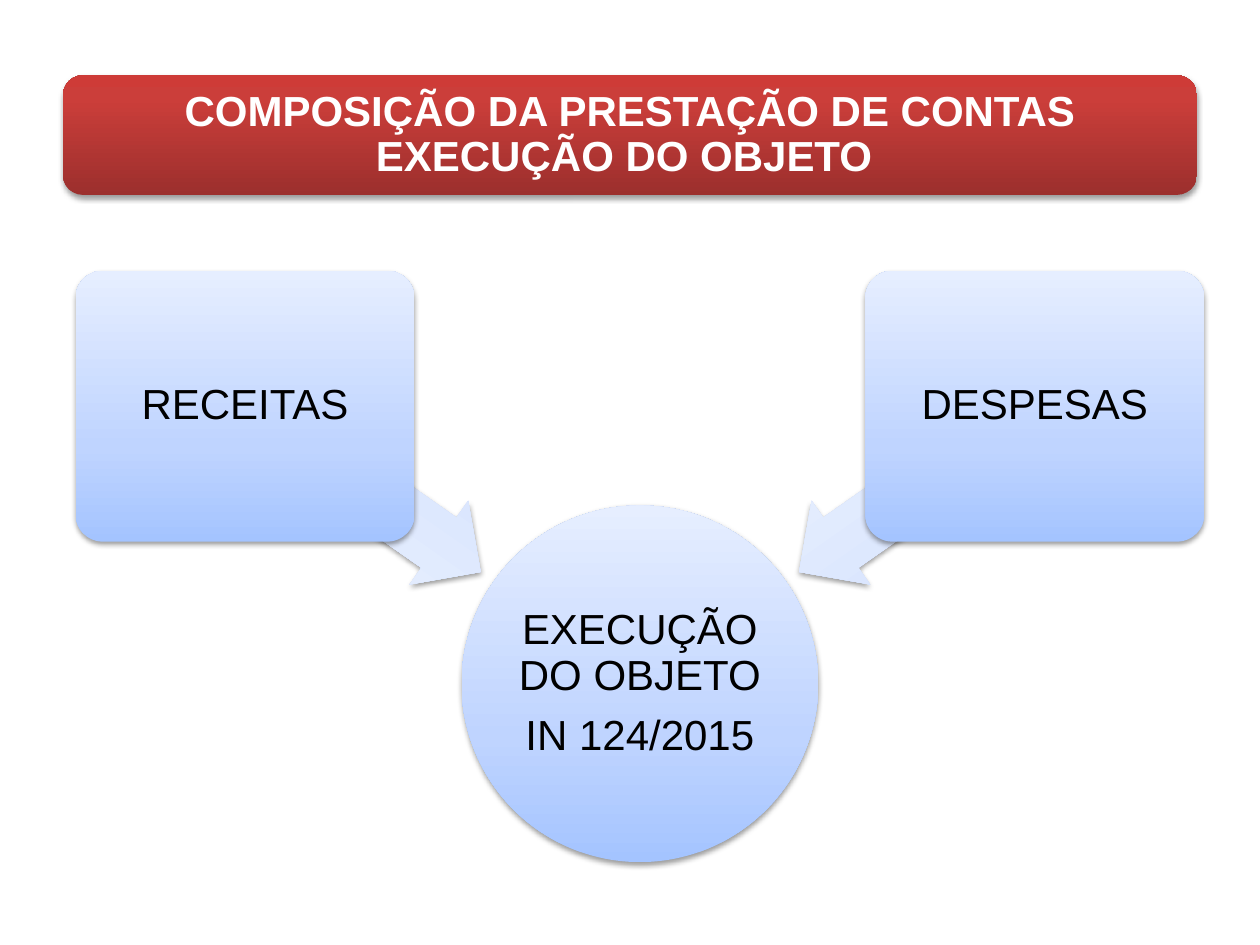
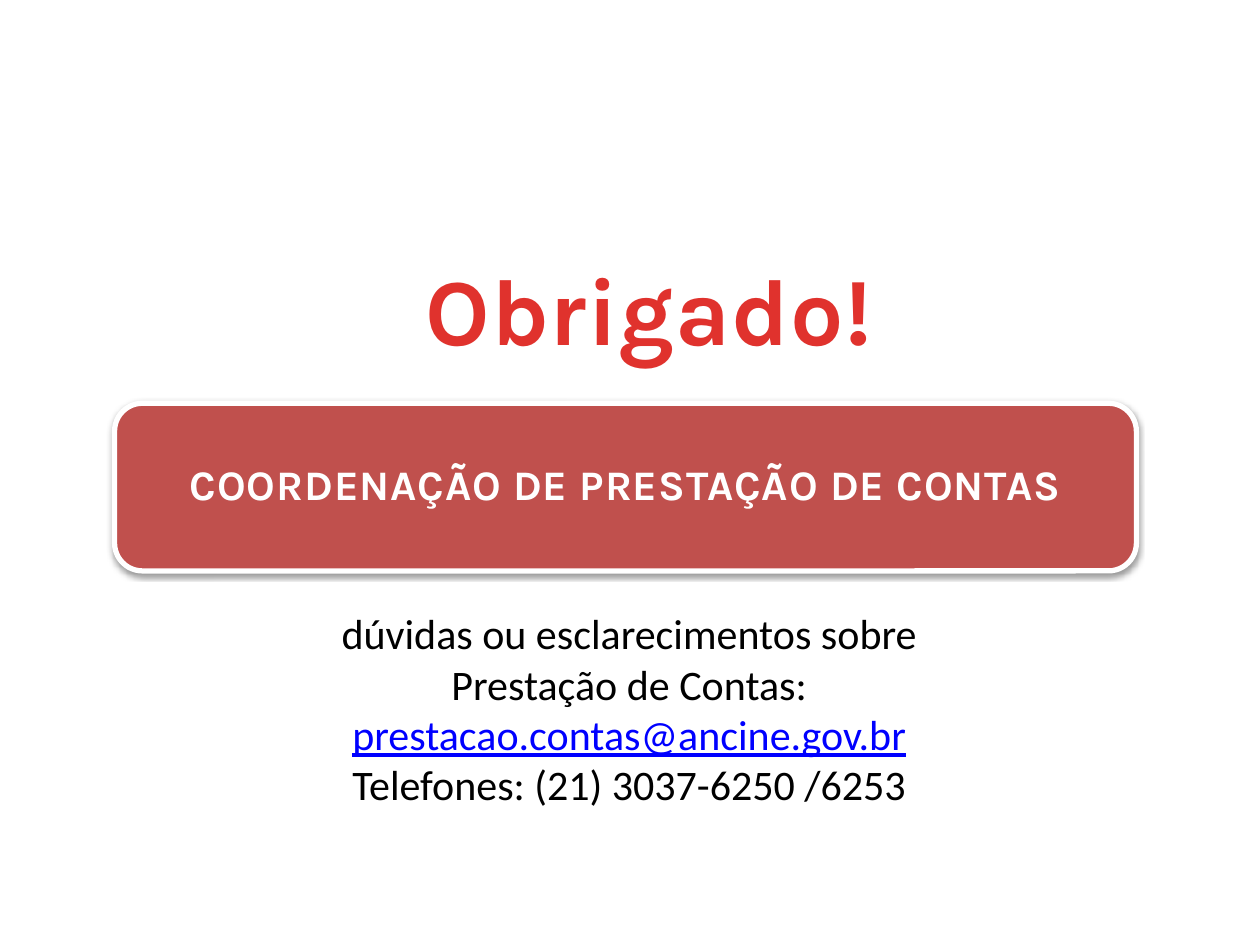
from dataclasses import dataclass

from lxml.etree import SubElement
from pptx import Presentation
from pptx.dml.color import RGBColor
from pptx.enum.shapes import MSO_SHAPE
from pptx.enum.text import MSO_ANCHOR, PP_ALIGN
from pptx.oxml.ns import qn
from pptx.util import Cm, Pt


@dataclass(frozen=True)
class Theme:
    """Colours, gradients (position, colour), fonts and type sizes."""
    white: str = "FFFFFF"
    black: str = "000000"
    banner: str = "C0504D"
    thanks: str = "E0322D"
    email: str = "0000FF"
    red_gradient: tuple = ((0, "9C2F2D"), (80, "CB3E3A"), (100, "CE3B37"))
    blue_gradient: tuple = ((0, "A4C4FF"), (35, "BFD4FF"), (100, "E6EEFF"))
    pale_gradient: tuple = ((0, "CDDDFE"), (35, "DBE6FE"), (100, "F0F5FF"))
    diagram_font: str = "Arial"
    closing_font: str = "Karla"
    contact_font: str = "Calibri"
    body_size: int = 24
    thanks_size: int = 54


class Deck:
    """Holds the theme and the current slide."""

    def __init__(self, theme):
        self.theme = theme
        self.presentation = Presentation()
        self.presentation.slide_width = Cm(25.4)
        self.presentation.slide_height = Cm(19.05)
        self.slide = None

    def new_slide(self):
        self.slide = self.presentation.slides.add_slide(
            self.presentation.slide_layouts[6])

    def add_shape(self, kind, box, fill, adjustments=(), rotation=0, outline=None, shadow=True):
        """Add a preset shape; fill is a colour or a tuple of gradient stops."""
        shape = self.slide.shapes.add_shape(kind, *map(Cm, box))
        shape.rotation = rotation
        for index, value in enumerate(adjustments):
            shape.adjustments[index] = value
        if isinstance(fill, str):
            shape.fill.solid()
            shape.fill.fore_color.rgb = RGBColor.from_string(fill)
        else:
            self.add_gradient(shape, fill)
        if outline:
            shape.line.color.rgb = RGBColor.from_string(outline)
            shape.line.width = Pt(3)
        else:
            shape.line.fill.background()
        shape.shadow.inherit = False
        if shadow:
            self.add_shadow(shape)
        return shape

    def add_gradient(self, shape, stops):
        """Fill from bottom to top with any number of stops."""
        shape.fill.gradient()
        shape.fill.gradient_angle = 90
        stop_list = shape._element.spPr.find(".//" + qn("a:gsLst"))
        for stop in list(stop_list):
            stop_list.remove(stop)
        for position, colour in stops:
            stop = SubElement(stop_list, qn("a:gs"), pos=str(position * 1000))
            SubElement(stop, qn("a:srgbClr"), val=colour)

    def add_shadow(self, shape):
        effects = shape._element.spPr.find(qn("a:effectLst"))
        shadow = SubElement(effects, qn("a:outerShdw"), blurRad=str(Pt(3.1)),
                            dist=str(Pt(1.6)), dir="5400000", rotWithShape="0")
        colour = SubElement(shadow, qn("a:srgbClr"), val=self.theme.black)
        SubElement(colour, qn("a:alpha"), val="38000")

    def add_text_box(self, box):
        return self.slide.shapes.add_textbox(*map(Cm, box))

    def add_text(self, shape, lines, font, colours, size=None, bold=False, inset=0.25,
                 anchor=MSO_ANCHOR.MIDDLE, line_spacing=0.9, gap=8.4, tracking=0):
        """Set centred paragraphs; colours holds one colour for each line."""
        frame = shape.text_frame
        frame_format = {
            "word_wrap": True, "vertical_anchor": anchor,
            "margin_left": Cm(inset), "margin_right": Cm(inset),
            "margin_top": Cm(inset), "margin_bottom": Cm(inset),
        }
        if anchor == MSO_ANCHOR.TOP:
            frame_format.update(margin_top=Cm(0.13), margin_bottom=Cm(0.13))
        for name, value in frame_format.items():
            setattr(frame, name, value)
        for index, (line, colour) in enumerate(zip(lines, colours)):
            paragraph = frame.add_paragraph() if index else frame.paragraphs[0]
            paragraph.text = line
            paragraph_format = {
                "alignment": PP_ALIGN.CENTER, "line_spacing": line_spacing,
                "space_before": Pt(gap if index else 0),
            }
            for name, value in paragraph_format.items():
                setattr(paragraph, name, value)
            run_format = {
                "name": font, "size": Pt(size or self.theme.body_size), "bold": bold,
                "underline": colour == self.theme.email,
            }
            for run in paragraph.runs:
                for name, value in run_format.items():
                    setattr(run.font, name, value)
                run.font.color.rgb = RGBColor.from_string(colour)
                if tracking:
                    run._r.get_or_add_rPr().set("spc", str(tracking))


def composition_slide(deck):
    theme = deck.theme
    deck.new_slide()

    # Title band
    title = deck.add_shape(MSO_SHAPE.ROUNDED_RECTANGLE, (1.27, 1.52, 22.86, 2.41),
                           theme.red_gradient)
    deck.add_text(title, ["COMPOSIÇÃO DA PRESTAÇÃO DE CONTAS\nEXECUÇÃO DO OBJETO "],
                  theme.diagram_font, [theme.white], bold=True)

    # Central circle
    centre, diameter = 12.9, 7.19
    circle = deck.add_shape(MSO_SHAPE.OVAL,
                            (centre - diameter / 2, 10.19, diameter, diameter),
                            theme.blue_gradient)
    deck.add_text(circle, ["EXECUÇÃO DO OBJETO", "IN 124/2015"],
                  theme.diagram_font, [theme.black] * 2, inset=0.05)

    # Sources on both sides, mirrored about the circle
    box_width, arrow_width = 6.83, 5.79
    box_offset, arrow_offset = 7.96, 5.58
    for label, side, rotation in (("RECEITAS", -1, 215), ("DESPESAS", 1, 325)):
        arrow_left = centre + side * arrow_offset - arrow_width / 2
        deck.add_shape(MSO_SHAPE.LEFT_ARROW, (arrow_left, 8.84, arrow_width, 2.06),
                       theme.pale_gradient, (0.6, 0.5), rotation)
        box_left = centre + side * box_offset - box_width / 2
        source = deck.add_shape(MSO_SHAPE.ROUNDED_RECTANGLE,
                                (box_left, 5.46, box_width, 5.46),
                                theme.blue_gradient, (0.1,))
        deck.add_text(source, [label], theme.diagram_font, [theme.black], inset=0.13)


def closing_slide(deck):
    theme = deck.theme
    deck.new_slide()

    # Department banner
    banner = deck.add_shape(MSO_SHAPE.ROUNDED_RECTANGLE, (2.31, 8.13, 20.6, 3.38),
                            theme.banner, outline=theme.white)
    deck.add_text(banner, ["COORDENAÇÃO DE PRESTAÇÃO DE CONTAS"], theme.closing_font,
                  [theme.white], bold=True, tracking=50)

    # Thanks
    thanks = deck.add_shape(MSO_SHAPE.RECTANGLE, (7.9, 4.93, 10.39, 2.57),
                            theme.white, shadow=False)
    deck.add_text(thanks, ["Obrigado!"], theme.closing_font, [theme.thanks],
                  size=theme.thanks_size, bold=True, anchor=MSO_ANCHOR.TOP,
                  line_spacing=1.0, tracking=50)

    # Contact details
    contact = deck.add_text_box((5.89, 12.12, 13.59, 4.37))
    deck.add_text(contact,
                  ["dúvidas ou esclarecimentos sobre Prestação de Contas:",
                   "prestacao.contas@ancine.gov.br",
                   "Telefones: (21) 3037-6250 /6253"],
                  theme.contact_font, [theme.black, theme.email, theme.black],
                  anchor=MSO_ANCHOR.TOP, line_spacing=1.0, gap=0)


def main():
    deck = Deck(Theme())
    composition_slide(deck)
    closing_slide(deck)
    deck.presentation.save("out.pptx")


if __name__ == "__main__":
    main()
